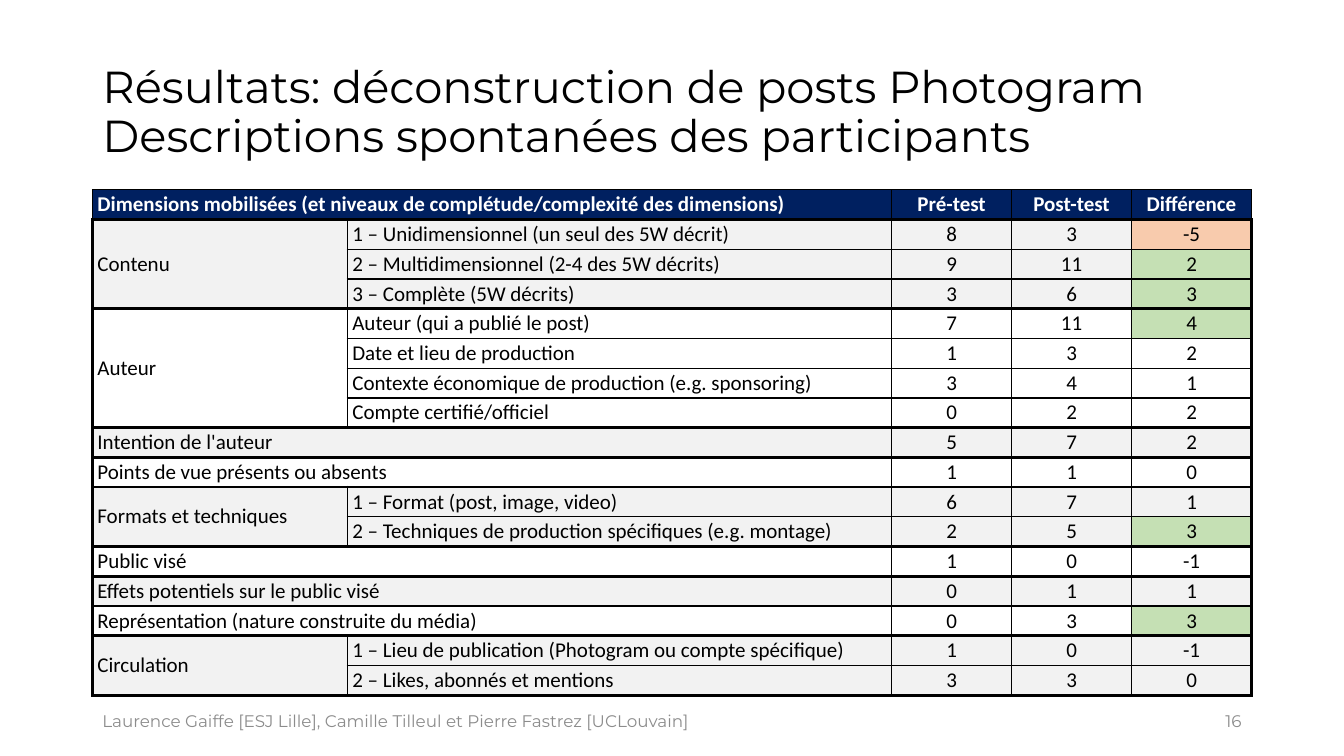
from dataclasses import dataclass

from lxml.etree import SubElement
from pptx import Presentation
from pptx.dml.color import RGBColor
from pptx.enum.text import MSO_ANCHOR as Anchor, MSO_AUTO_SIZE as AutoSize, PP_ALIGN as Align
from pptx.oxml.ns import qn
from pptx.util import Pt


@dataclass(frozen=True)
class Theme:
    title_font: str = "Montserrat"
    table_font: str = "Calibri"
    title_size: float = 32
    table_size: float = 15
    footer_size: float = 12
    black: str = "000000"
    white: str = "FFFFFF"
    navy: str = "002060"
    band: str = "F2F2F2"
    gain: str = "C5E0B4"
    loss: str = "F8CBAD"
    muted: str = "8C8C8C"
    thin: float = 1
    thick: float = 2.25


THEME = Theme()
LEFT, WIDTH = 66, 828
HEADERS = ["Dimensions mobilisées (et niveaux de complétude/complexité des dimensions)", "",
           "Pré-test", "Post-test", "Différence"]
COLUMN_WIDTHS = [182.1, 388.8, 85.7, 85.7, 85.7]
ROW_HEIGHT = 20.85

# Each dimension holds its levels: label, pre-test, post-test, colour of the difference.
DIMENSIONS = [
    ("Contenu", [
        ("1 – Unidimensionnel (un seul des 5W décrit)", 8, 3, THEME.loss),
        ("2 – Multidimensionnel (2-4 des 5W décrits)", 9, 11, THEME.gain),
        ("3 – Complète (5W décrits)", 3, 6, THEME.gain)]),
    ("Auteur", [
        ("Auteur (qui a publié le post)", 7, 11, THEME.gain),
        ("Date et lieu de production", 1, 3, None),
        ("Contexte économique de production (e.g. sponsoring)", 3, 4, None),
        ("Compte certifié/officiel", 0, 2, None)]),
    ("Intention de l'auteur", [("", 5, 7, None)]),
    ("Points de vue présents ou absents", [("", 1, 1, None)]),
    ("Formats et techniques", [
        ("1 – Format (post, image, video)", 6, 7, None),
        ("2 – Techniques de production spécifiques (e.g. montage)", 2, 5, THEME.gain)]),
    ("Public visé", [("", 1, 0, None)]),
    ("Effets potentiels sur le public visé", [("", 0, 1, None)]),
    ("Représentation (nature construite du média)", [("", 0, 3, THEME.gain)]),
    ("Circulation", [
        ("1 – Lieu de publication (Photogram ou compte spécifique)", 1, 0, None),
        ("2 – Likes, abonnés et mentions", 3, 3, None)]),
]


def write(text_frame, text, font, size, color, align=Align.LEFT, bold=False):
    text_frame.text = text
    paragraph = text_frame.paragraphs[0]
    paragraph.alignment = align
    for run in paragraph.runs:
        for name, value in {"name": font, "size": Pt(size), "bold": bold}.items():
            setattr(run.font, name, value)
        run.font.color.rgb = RGBColor.from_string(color)
    return paragraph


def fill_cell(cell, text, column, fill, borders, color=THEME.black, bold=False):
    """Write one table cell; borders are the left, right, top and bottom widths."""
    cell_format = {"margin_left": Pt(3.6), "margin_right": Pt(3.6), "margin_top": Pt(1.44),
                   "margin_bottom": Pt(1.44), "vertical_anchor": Anchor.MIDDLE}
    for name, value in cell_format.items():
        setattr(cell, name, value)
    write(cell.text_frame, text, THEME.table_font, THEME.table_size, color,
          Align.CENTER if column > 1 else Align.LEFT, bold)
    properties = cell._tc.get_or_add_tcPr()
    for side, width in zip("LRTB", borders):
        line = SubElement(properties, qn(f"a:ln{side}"), w=str(Pt(width)))
        line_fill = SubElement(line, qn("a:solidFill"))
        SubElement(line_fill, qn("a:srgbClr"), val=THEME.black)
    cell.fill.solid()
    cell.fill.fore_color.rgb = RGBColor.from_string(fill)


presentation = Presentation()
presentation.slide_width, presentation.slide_height = Pt(960), Pt(540)
slide = presentation.slides.add_slide(presentation.slide_layouts[5])

# Title
title = slide.shapes.title
title_place = {"left": Pt(LEFT), "top": Pt(28.8), "width": Pt(WIDTH), "height": Pt(104.4)}
for name, value in title_place.items():
    setattr(title, name, value)
title.text_frame.auto_size = AutoSize.NONE
title.text_frame.vertical_anchor = Anchor.MIDDLE
title_paragraph = write(
    title.text_frame,
    "Résultats: déconstruction de posts Photogram\vDescriptions spontanées des participants",
    THEME.title_font, THEME.title_size, THEME.black)
title_paragraph.line_spacing = 0.9

# Results table
row_count = 1 + sum(len(levels) for _, levels in DIMENSIONS)
table = slide.shapes.add_table(row_count, len(HEADERS), Pt(LEFT), Pt(135.6),
                               Pt(WIDTH), Pt(ROW_HEIGHT * row_count)).table
table.first_row = table.horz_banding = False
for table_column, width in zip(table.columns, COLUMN_WIDTHS):
    table_column.width = Pt(width)
for table_row in table.rows:
    table_row.height = Pt(ROW_HEIGHT)

for column, header in enumerate(HEADERS):
    fill_cell(table.cell(0, column), header, column, THEME.navy,
              [THEME.thin, THEME.thin, THEME.thin, THEME.thick], THEME.white, True)
table.cell(0, 0).merge(table.cell(0, 1))

row = 1
for index, (dimension, levels) in enumerate(DIMENSIONS):
    band = THEME.white if index % 2 else THEME.band
    first, last = row, row + len(levels) - 1
    for label, before, after, highlight in levels:
        texts = [dimension if row == first else "", label,
                 str(before), str(after), str(after - before)]
        for column, text in enumerate(texts):
            outer = [column == 0, column == 4,
                     column == 0 or row == first, column == 0 or row == last]
            borders = [THEME.thick if edge else THEME.thin for edge in outer]
            fill = highlight if column == 4 and highlight else band
            fill_cell(table.cell(row, column), text, column, fill, borders)
        row += 1
    merge_end = table.cell(last, 0) if len(levels) > 1 else table.cell(first, 1)
    table.cell(first, 0).merge(merge_end)

# Footer
for left, width, text, align in [
    (LEFT, 600.5, "Laurence Gaiffe [ESJ Lille], Camille Tilleul et Pierre Fastrez [UCLouvain]",
     Align.LEFT),
    (678, 216, "16", Align.RIGHT),
]:
    footer = slide.shapes.add_textbox(Pt(left), Pt(500.5), Pt(width), Pt(28.8)).text_frame
    footer.word_wrap = True
    footer.vertical_anchor = Anchor.MIDDLE
    write(footer, text, THEME.title_font, THEME.footer_size, THEME.muted, align)

presentation.save("out.pptx")
